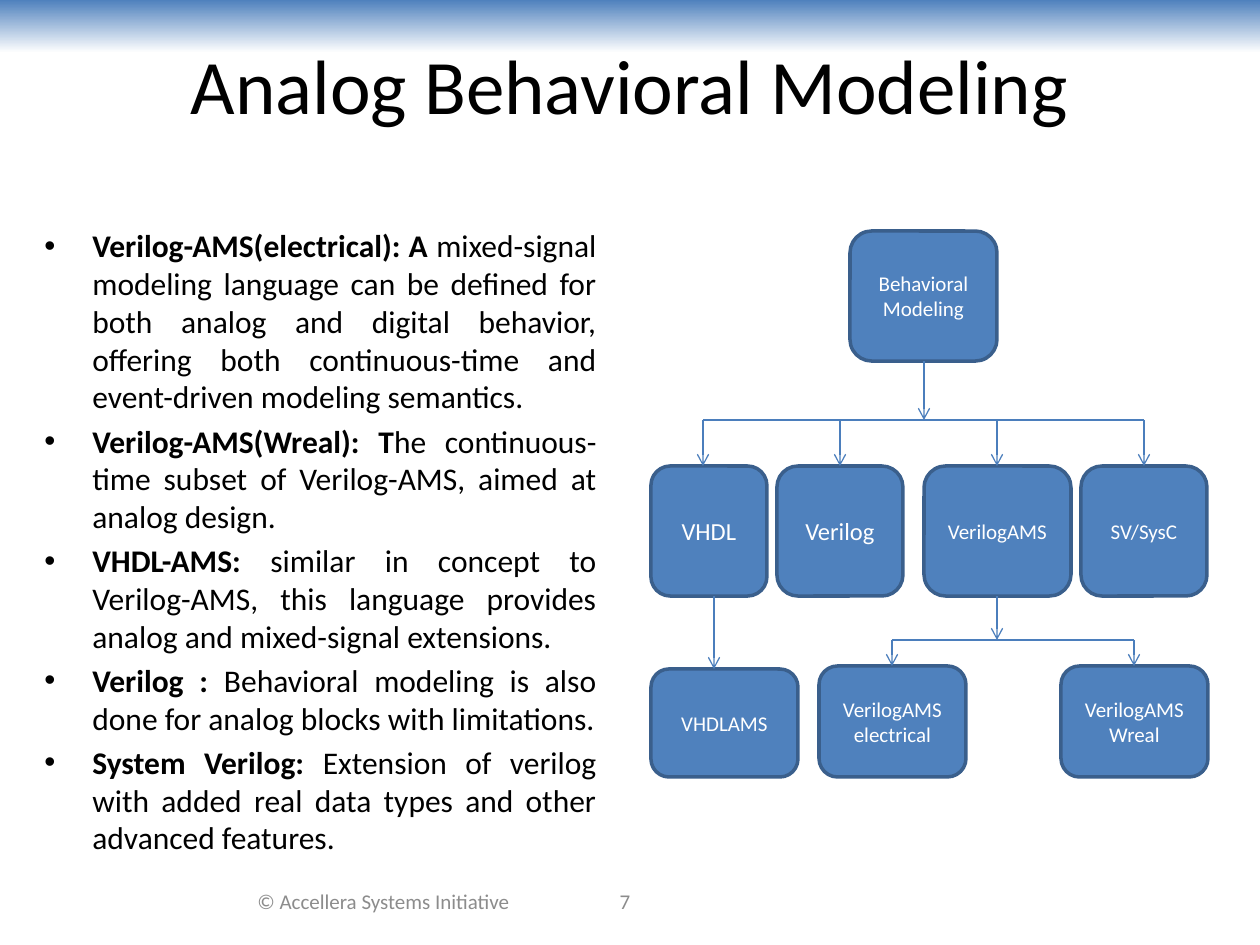
import pptx
import pptx.dml.color
import pptx.enum.shapes
import pptx.enum.text
import pptx.oxml.ns
import pptx.util
from lxml import etree

EMU_PER_PX = 914400 / 126
FONT = "Calibri"
PP = pptx.enum.text.PP_ALIGN
MIDDLE = pptx.enum.text.MSO_ANCHOR.MIDDLE
SHAPE = pptx.enum.shapes.MSO_SHAPE
qn = pptx.oxml.ns.qn


def px(*lengths):
    return [pptx.util.Emu(round(n * EMU_PER_PX)) for n in lengths]


def rgb(hex_color):
    return pptx.dml.color.RGBColor.from_string(hex_color)


prs = pptx.Presentation()
prs.slide_width, prs.slide_height = px(1260, 945)
slide = prs.slides.add_slide(prs.slide_layouts[5])
shapes = slide.shapes

# Band across the top, placed behind the title
band = shapes.add_shape(SHAPE.RECTANGLE, *px(0, 0, 1260, 53))
band.shadow.inherit = False
band.line.fill.background()
band.fill.gradient()
band.fill.gradient_angle = 270
for stop, color in zip(band.fill.gradient_stops, ("4F81BD", "FFFFFF")):
    stop.color.rgb = rgb(color)
shapes.title._element.addprevious(band._element)

title = shapes.title
title.left, title.top, title.width, title.height = px(63, 31, 1134, 105)
title.text_frame.text = "Analog Behavioral Modeling"
title.text_frame.vertical_anchor = MIDDLE
heading = title.text_frame.paragraphs[0]
heading.alignment = PP.CENTER
heading.font.name = FONT
heading.font.size = pptx.util.Pt(44)
heading.font.color.rgb = rgb("000000")

# Language descriptions: bold lead, plain remainder
languages = [
    ("Verilog-AMS(electrical): A",
     " mixed-signal modeling language can be defined for both analog and digital "
     "behavior, offering both continuous-time and event-driven modeling semantics."),
    ("Verilog-AMS(Wreal): T",
     "he continuous-time subset of Verilog-AMS, aimed at analog design."),
    ("VHDL-AMS: ",
     "similar in concept to Verilog-AMS, this language provides analog and "
     "mixed-signal extensions."),
    ("Verilog :",
     " Behavioral modeling is also done for analog blocks with limitations."),
    ("System Verilog: ",
     "Extension of verilog with added real data types and other advanced features."),
]
description = shapes.add_textbox(*px(32, 220, 577, 624)).text_frame
description.word_wrap = True
indent, = px(48)
for i, (lead, remainder) in enumerate(languages):
    item = description.add_paragraph() if i else description.paragraphs[0]
    item.alignment = PP.JUSTIFY
    if i:
        item.space_before = pptx.util.Pt(3.6)
    properties = item._p.get_or_add_pPr()
    properties.set("marL", str(indent))
    properties.set("indent", str(-indent))
    etree.SubElement(properties, qn("a:buFont"), typeface="Arial")
    etree.SubElement(properties, qn("a:buChar"), char="•")
    item.font.name = FONT
    item.font.size = pptx.util.Pt(18)
    item.font.color.rgb = rgb("000000")
    lead_run = item.add_run()
    lead_run.text = lead
    lead_run.font.bold = True
    item.add_run().text = remainder

for left, width, text in [(231, 305, "© Accellera Systems Initiative"), (504, 242, "7")]:
    footer = shapes.add_textbox(*px(left, 876, width, 50)).text_frame
    footer.word_wrap = True
    footer.vertical_anchor = MIDDLE
    footer.text = text
    note = footer.paragraphs[0]
    note.alignment = PP.CENTER
    note.font.name = FONT
    note.font.size = pptx.util.Pt(12)
    note.font.color.rgb = rgb("8C8C8C")

# Tree of modeling languages: left, top, width, height, label, text size
nodes = [
    (850, 231, 147, 130, "Behavioral Modeling", 12),
    (651, 466, 116, 130, "VHDL", 14),
    (777, 466, 126, 130, "Verilog", 14),
    (924, 466, 147, 130, "VerilogAMS", 12),
    (1081, 466, 126, 130, "SV/SysC", 12),
    (651, 669, 147, 108, "VHDLAMS", 12),
    (819, 666, 147, 111, "VerilogAMS\nelectrical", 12),
    (1061, 666, 147, 111, "VerilogAMS\nWreal", 12),
]
for left, top, width, height, label, size in nodes:
    node = shapes.add_shape(SHAPE.ROUNDED_RECTANGLE, *px(left, top, width, height))
    node.shadow.inherit = False
    node.fill.solid()
    node.fill.fore_color.rgb = rgb("4F81BD")
    node.line.color.rgb = rgb("3A5F8C")
    node.line.width = pptx.util.Pt(2)
    node.text_frame.word_wrap = True
    node.text_frame.vertical_anchor = MIDDLE
    node.text_frame.text = label
    for line in node.text_frame.paragraphs:
        line.alignment = PP.CENTER
        line.font.name = FONT
        line.font.size = pptx.util.Pt(size)
        line.font.color.rgb = rgb("FFFFFF")

# Branches: start x, start y, end x, end y; vertical ones carry an arrowhead
upper_bus, lower_bus = 420, 640
branches = [
    (703, upper_bus, 1144, upper_bus),
    (892, lower_bus, 1134, lower_bus),
    (924, 361, 924, upper_bus),
    (997, 596, 997, lower_bus),
    (714, 596, 714, 669),
]
branches += [(x, upper_bus, x, 466) for x in (703, 840, 997, 1144)]
branches += [(x, lower_bus, x, 666) for x in (892, 1134)]
for x1, y1, x2, y2 in branches:
    branch = shapes.add_connector(
        pptx.enum.shapes.MSO_CONNECTOR.STRAIGHT, *px(x1, y1, x2, y2))
    branch.line.color.rgb = rgb("4B7EBC")
    branch.line.width = pptx.util.Pt(0.75)
    if x1 == x2:
        etree.SubElement(branch.line._get_or_add_ln(), qn("a:tailEnd"), type="arrow")
    etree.SubElement(branch._element.spPr, qn("a:effectLst"))

prs.save("out.pptx")
